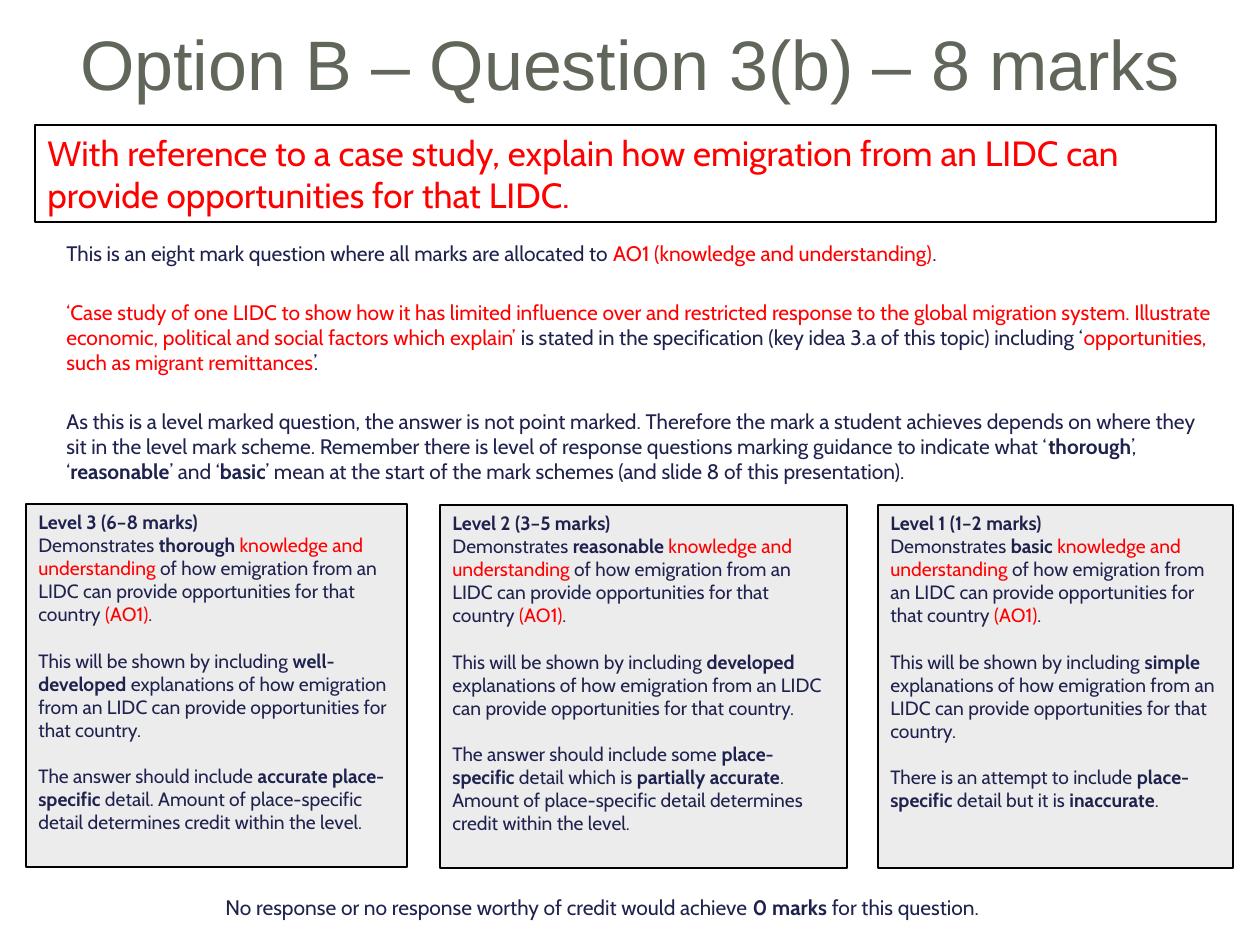
"""Build the mark scheme slide for question 3(b)."""
from pptx import Presentation
from pptx import util as u
from pptx.dml.color import RGBColor
from pptx.enum import shapes, text

PX = 914400 // 126
NAVY = RGBColor(0x1F, 0x22, 0x4E)
RED = RGBColor(0xFF, 0, 0)
OLIVE = RGBColor(0x60, 0x66, 0x5A)
GREY = RGBColor(0xEC, 0xEC, 0xEC)
WHITE = RGBColor(0xFF, 0xFF, 0xFF)
BLACK = RGBColor(0, 0, 0)

TITLE = "Option B – Question 3(b) – 8 marks"
ASK = ("With reference to a case study, explain how emigration from an LIDC "
       "can provide opportunities for that LIDC.")
NOTES = [
    "This is an eight mark question where all marks are allocated to "
    "~AO1 (knowledge and understanding)~.",
    "~‘Case study of one LIDC to show how it has limited influence over and "
    "restricted response to the global migration system. Illustrate economic, "
    "political and social factors which explain’~ is stated in the "
    "specification (key idea 3.a of this topic) including ‘~opportunities, "
    "such as migrant remittances~’.",
    "As this is a level marked question, the answer is not point marked. "
    "Therefore the mark a student achieves depends on where they sit in the "
    "level mark scheme. Remember there is level of response questions marking "
    "guidance to indicate what ‘*thorough*’, ‘*reasonable*’ and ‘*basic*’ mean "
    "at the start of the mark schemes (and slide 8 of this presentation).",
]
LEVELS = [
    ("Level 3 (6–8 marks)", "thorough", "well-developed",
     "The answer should include *accurate place-specific* detail. Amount of "
     "place-specific detail determines credit within the level.",
     (26, 504, 381, 363)),
    ("Level 2 (3–5 marks)", "reasonable", "developed",
     "The answer should include some *place-specific* detail which is "
     "*partially accurate*. Amount of place-specific detail determines credit "
     "within the level.",
     (440, 505, 407, 363)),
    ("Level 1 (1–2 marks)", "basic", "simple",
     "There is an attempt to include *place-specific* detail but it is "
     "*inaccurate*.",
     (878, 505, 355, 363)),
]
SHOWS = ("Demonstrates *{} *~knowledge and understanding~ of how emigration "
         "from an LIDC can provide opportunities for that country ~(AO1)~.")
GIVES = ("This will be shown by including *{}* explanations of how emigration "
         "from an LIDC can provide opportunities for that country.")
NONE = ("No response or no response worthy of credit would achieve "
        "*0 marks *for this question.")


def write(frame, paras, size=12, color=NAVY, font="Cabin", gaps=(),
          align=text.PP_ALIGN.LEFT, anchor=text.MSO_ANCHOR.TOP, lead=None):
    """Fill a frame; ~ marks red words and * marks bold words."""
    frame.word_wrap = True
    frame.auto_size = text.MSO_AUTO_SIZE.NONE
    frame.vertical_anchor = anchor
    for i, words in enumerate(paras):
        para = frame.paragraphs[0] if i == 0 else frame.add_paragraph()
        para.alignment = align
        para.line_spacing = lead
        para.space_before = u.Pt(gaps[i] if gaps else 0)
        for j, part in enumerate(words.split("~")):
            for k, bit in enumerate(part.split("*")):
                if bit:
                    run = para.add_run()
                    run.text = bit
                    run.font.size = u.Pt(size)
                    run.font.name = font
                    run.font.bold = k % 2 == 1
                    run.font.color.rgb = RED if j % 2 else color


def place(at):
    return [n * PX for n in at]


def panel(at, fill, line=BLACK):
    box = slide.shapes.add_shape(shapes.MSO_SHAPE.RECTANGLE, *place(at))
    box.shadow.inherit = False
    box.fill.solid()
    box.fill.fore_color.rgb = fill
    if line is None:
        box.line.fill.background()
    else:
        box.line.color.rgb = line
        box.line.width = u.Pt(0.75)
    return box.text_frame


deck = Presentation()
deck.slide_width, deck.slide_height = place((1260, 945))
slide = deck.slides.add_slide(deck.slide_layouts[5])

title = slide.shapes.title
title.left, title.top, title.width, title.height = place((0, 0, 1260, 135))
write(title.text_frame, [TITLE], size=40, color=OLIVE, font="Arial", lead=0.9,
      align=text.PP_ALIGN.CENTER, anchor=text.MSO_ANCHOR.MIDDLE)

write(panel((35, 125, 1181, 97), WHITE), [ASK], size=20, color=RED)
notes = slide.shapes.add_textbox(*place((54, 234, 1179, 139)))
write(notes.text_frame, NOTES, gaps=(0, 19.3, 19.3))

for head, grade, depth, detail, at in LEVELS:
    paras = [f"*{head}*", SHOWS.format(grade), GIVES.format(depth), detail]
    write(panel(at, GREY), paras, size=11, gaps=(0, 0, 13.2, 13.2))

write(panel((213, 888, 824, 38), WHITE, line=None), [NONE])

deck.save("out.pptx")
